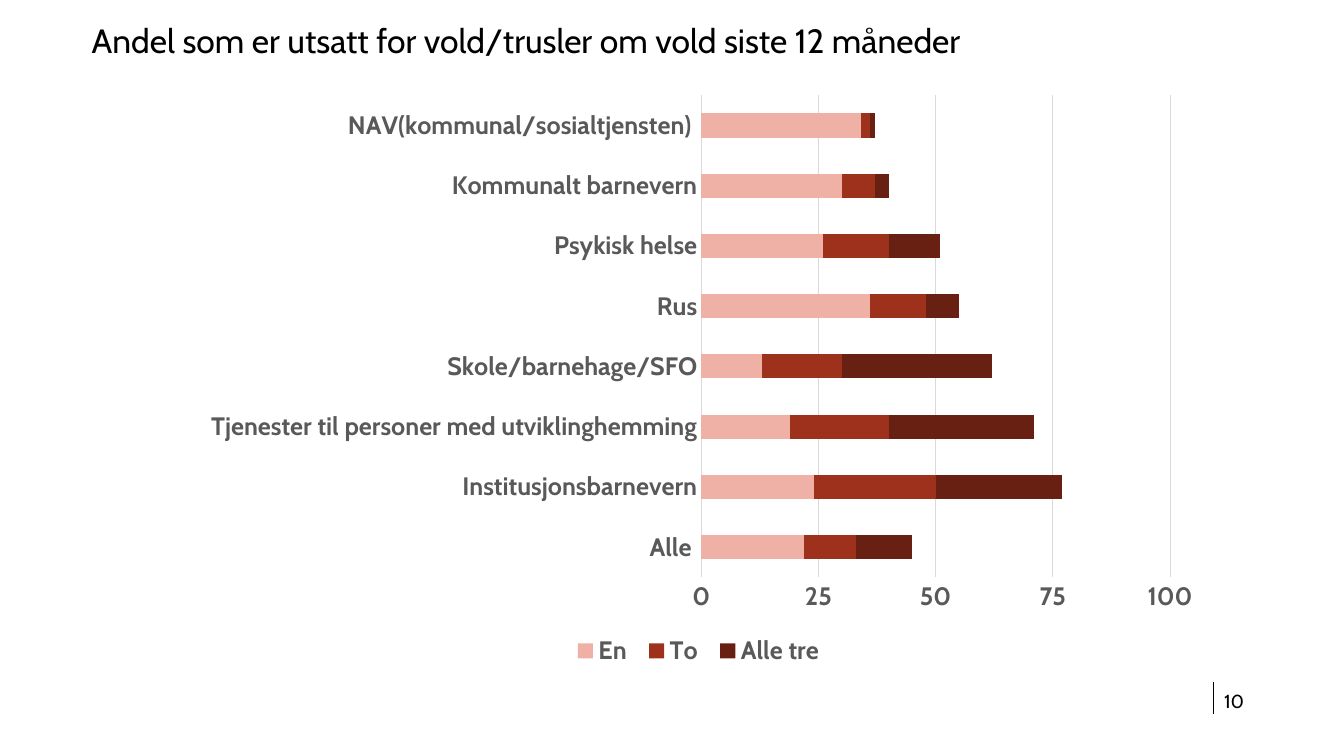
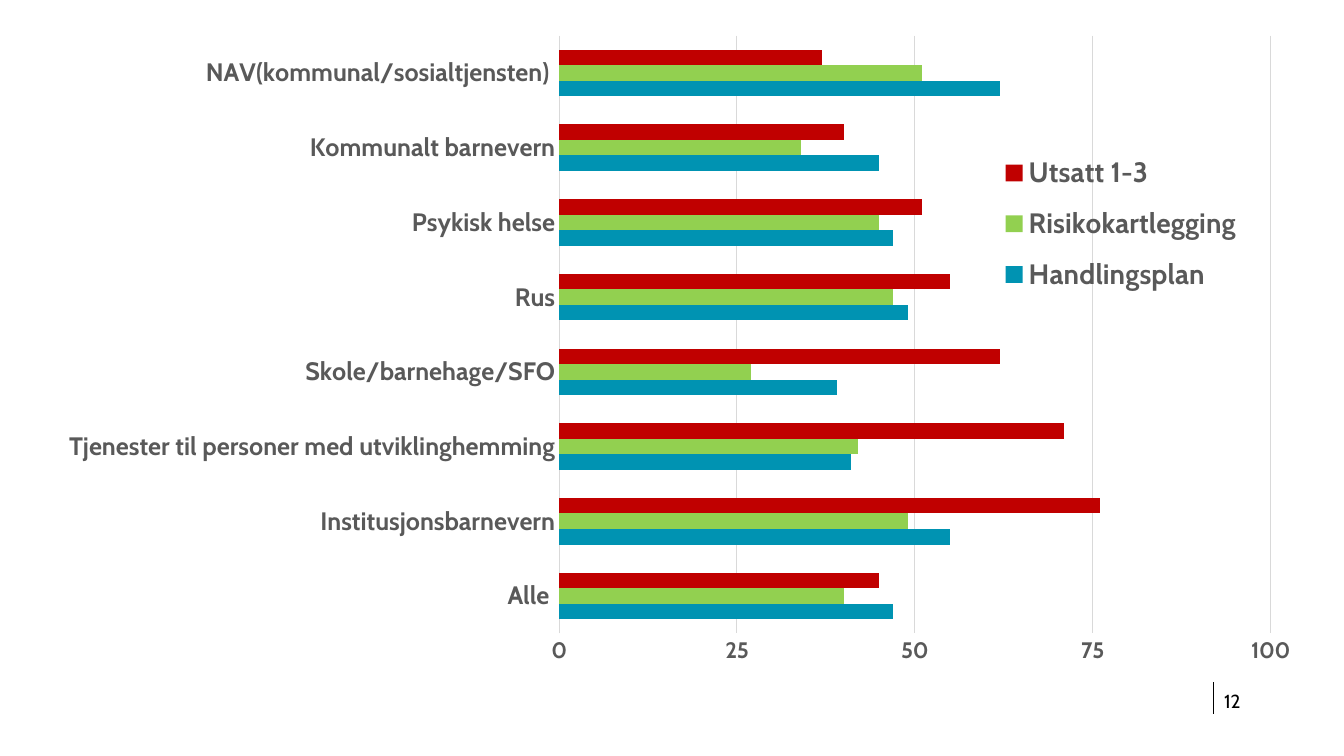
from dataclasses import dataclass
from typing import Optional

from lxml import etree
from pptx import Presentation
from pptx.chart.chart import Chart
from pptx.chart.data import CategoryChartData
from pptx.dml.color import RGBColor
from pptx.enum.chart import XL_CHART_TYPE, XL_LEGEND_POSITION, XL_TICK_MARK
from pptx.enum.shapes import MSO_CONNECTOR
from pptx.enum.text import MSO_ANCHOR, MSO_AUTO_SIZE, PP_ALIGN
from pptx.oxml import parse_xml
from pptx.oxml.ns import nsdecls, qn
from pptx.slide import Slide
from pptx.util import Inches, Pt

STACKED = XL_CHART_TYPE.BAR_STACKED
CLUSTERED = XL_CHART_TYPE.BAR_CLUSTERED
LEGEND_BOTTOM = XL_LEGEND_POSITION.BOTTOM
NO_TICK = XL_TICK_MARK.NONE
STRAIGHT = MSO_CONNECTOR.STRAIGHT
TITLE_ONLY, BLANK = 5, 6


@dataclass(frozen=True)
class Theme:
    font: str = "Cabin"
    text: RGBColor = RGBColor(0x00, 0x00, 0x00)
    label: RGBColor = RGBColor(0x59, 0x59, 0x59)
    grid: RGBColor = RGBColor(0xD9, 0xD9, 0xD9)
    title_size: float = 24
    number_size: float = 13.5
    category_size: float = 18
    line_width: float = 0.75


@dataclass(frozen=True)
class Series:
    name: str
    values: tuple[int, ...]
    color: str


@dataclass(frozen=True)
class Box:
    """Left, top, width and height: inches on a slide, fractions in a chart."""
    x: float
    y: float
    w: float
    h: float


@dataclass(frozen=True)
class BarChart:
    kind: XL_CHART_TYPE
    box: Box
    plot: Box
    gap: int
    overlap: int
    value_size: float
    legend_size: float
    series: tuple[Series, ...]
    legend: Optional[Box] = None


THEME = Theme()
SERVICES = (
    "Alle ",
    "Institusjonsbarnevern",
    "Tjenester til personer med utviklinghemming",
    "Skole/barnehage/SFO",
    "Rus",
    "Psykisk helse",
    "Kommunalt barnevern",
    "NAV(kommunal/sosialtjensten) ",
)
EXPOSED = BarChart(
    STACKED, Box(1.9, 0.83, 10.11, 5.83), Box(0.5, 0.02, 0.46, 0.82),
    gap=150, overlap=100, value_size=18, legend_size=18,
    series=(
        Series("En ", (22, 24, 19, 13, 36, 26, 30, 34), "EFB1A5"),
        Series("To ", (11, 26, 21, 17, 12, 14, 7, 2), "9D311B"),
        Series("Alle tre ", (12, 27, 31, 32, 7, 11, 3, 1), "682012"),
    ),
)
MEASURES = BarChart(
    CLUSTERED, Box(0.3, 0.2, 12.58, 6.97), Box(0.417, 0.022, 0.561, 0.851),
    gap=182, overlap=0, value_size=16, legend_size=20,
    series=(
        Series("Handlingsplan", (47, 55, 41, 39, 49, 47, 45, 62), "0093B2"),
        Series("Risikokartlegging", (40, 49, 42, 27, 47, 45, 34, 51), "92D050"),
        Series("Utsatt 1-3", (45, 76, 71, 62, 55, 51, 40, 37), "C00000"),
    ),
    legend=Box(0.76, 0.17, 0.2, 0.24),
)


def style_font(font, size: float, color: RGBColor, bold: bool = False) -> None:
    font.name = THEME.font
    font.size = Pt(size)
    font.bold = bold
    font.color.rgb = color


def style_line(line, color: RGBColor) -> None:
    line.color.rgb = color
    line.width = Pt(THEME.line_width)


def layout_xml(box: Box, inner: bool = False):
    """Manual chart layout in fractions of the chart area."""
    target = '<c:layoutTarget val="inner"/>' if inner else ""
    return parse_xml(
        f'<c:layout {nsdecls("c")}><c:manualLayout>{target}'
        '<c:xMode val="edge"/><c:yMode val="edge"/>'
        f'<c:x val="{box.x}"/><c:y val="{box.y}"/>'
        f'<c:w val="{box.w}"/><c:h val="{box.h}"/>'
        '</c:manualLayout></c:layout>'
    )


def place_parts(chart: Chart, plot: Box, legend: Optional[Box]) -> None:
    area = chart.element.find(".//" + qn("c:plotArea"))
    places = [(area, 0, layout_xml(plot, inner=True))]
    if legend:
        places.append((chart.element.find(".//" + qn("c:legend")), 1, layout_xml(legend)))
    for parent, index, layout in places:
        for old in parent.findall(qn("c:layout")):
            parent.remove(old)
        parent.insert(index, layout)


def add_bar_chart(slide: Slide, spec: BarChart) -> None:
    data = CategoryChartData(number_format="General")
    data.categories = SERVICES
    for series in spec.series:
        data.add_series(series.name, series.values)
    b = spec.box
    chart = slide.shapes.add_chart(
        spec.kind, Inches(b.x), Inches(b.y), Inches(b.w), Inches(b.h), data
    ).chart
    chart.has_title = False
    style_font(chart.font, spec.value_size, THEME.text, bold=True)

    plot = chart.plots[0]
    plot.vary_by_categories = False
    plot.gap_width = spec.gap
    plot.overlap = spec.overlap
    for drawn, series in zip(plot.series, spec.series):
        drawn.invert_if_negative = False
        drawn.format.fill.solid()
        drawn.format.fill.fore_color.rgb = RGBColor.from_string(series.color)

    services, percent = chart.category_axis, chart.value_axis
    for axis, size in ((services, THEME.category_size), (percent, spec.value_size)):
        axis.major_tick_mark = axis.minor_tick_mark = NO_TICK
        style_font(axis.tick_labels.font, size, THEME.label, bold=True)
    style_line(services.format.line, THEME.grid)
    percent.format.line.fill.background()
    percent.minimum_scale, percent.maximum_scale, percent.major_unit = 0, 100, 25
    percent.has_major_gridlines = True
    style_line(percent.major_gridlines.format.line, THEME.grid)

    chart.has_legend = True
    chart.legend.position = LEGEND_BOTTOM
    chart.legend.include_in_layout = spec.legend is not None
    style_font(chart.legend.font, spec.legend_size, THEME.label, bold=True)
    place_parts(chart, spec.plot, spec.legend)


def add_title(slide: Slide, text: str) -> None:
    sp = slide.shapes.title
    sp.left, sp.top = Inches(0.81), Inches(0.15)
    sp.width, sp.height = Inches(8.86), Inches(0.5)
    tf = sp.text_frame
    tf.text = text
    tf.word_wrap = False
    tf.auto_size = MSO_AUTO_SIZE.SHAPE_TO_FIT_TEXT
    tf.vertical_anchor = MSO_ANCHOR.TOP
    p = tf.paragraphs[0]
    p.alignment = PP_ALIGN.LEFT
    style_font(p.font, THEME.title_size, THEME.text)


def add_footer(slide: Slide, number: int) -> None:
    """Vertical rule with the page number to its right."""
    x = Inches(12.04)
    rule = slide.shapes.add_connector(STRAIGHT, x, Inches(6.77), x, Inches(7.08))
    style_line(rule.line, THEME.text)
    etree.SubElement(rule.element.spPr, qn("a:effectLst"))
    sp = slide.shapes.add_textbox(Inches(12.14), Inches(6.86), Inches(1.15), Inches(0.19))
    tf = sp.text_frame
    tf.margin_left = tf.margin_top = tf.margin_right = tf.margin_bottom = 0
    tf.word_wrap = True
    tf.vertical_anchor = MSO_ANCHOR.MIDDLE
    p = tf.paragraphs[0]
    p.text = str(number)
    style_font(p.font, THEME.number_size, THEME.text)


def main() -> None:
    prs = Presentation()
    prs.slide_width, prs.slide_height = Inches(13.33), Inches(7.5)

    exposed = prs.slides.add_slide(prs.slide_layouts[TITLE_ONLY])
    add_footer(exposed, 10)
    add_bar_chart(exposed, EXPOSED)
    add_title(exposed, "Andel som er utsatt for vold/trusler om vold siste 12 måneder")

    measures = prs.slides.add_slide(prs.slide_layouts[BLANK])
    add_footer(measures, 12)
    add_bar_chart(measures, MEASURES)

    prs.save("out.pptx")


if __name__ == "__main__":
    main()
